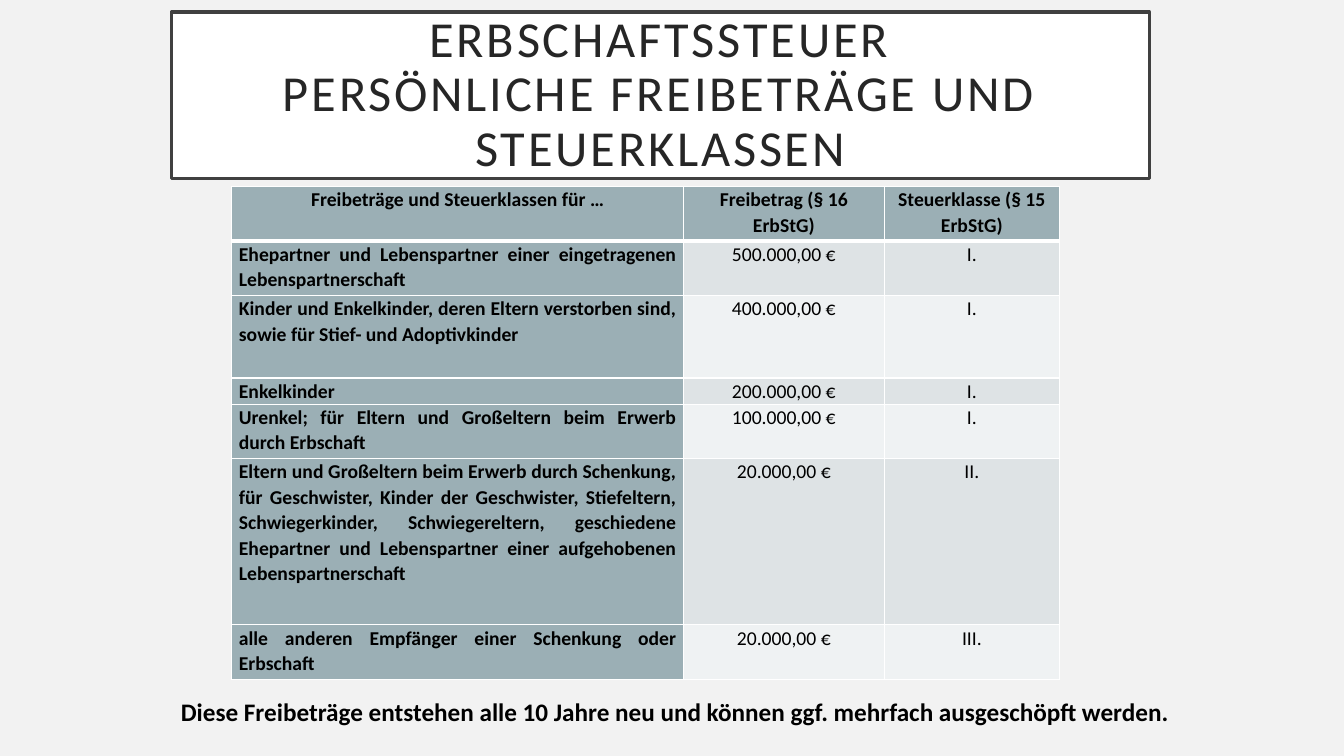
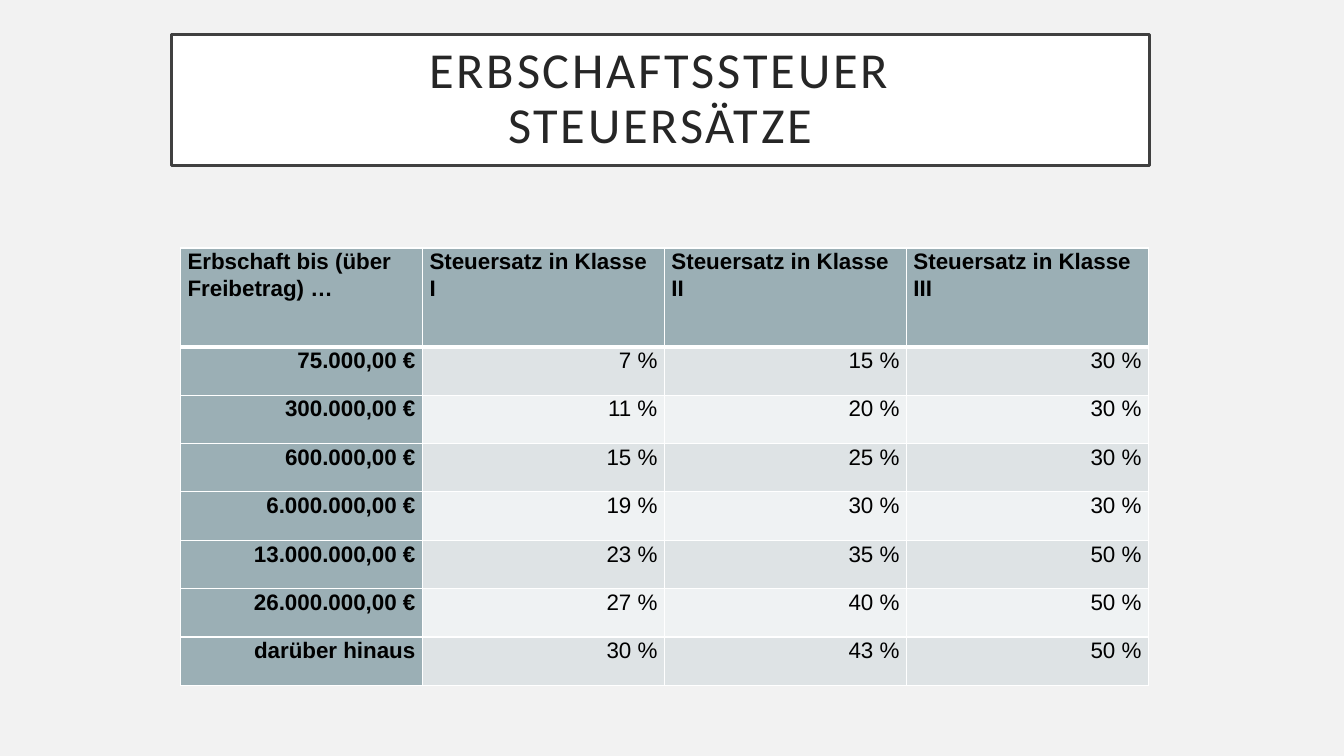
from dataclasses import dataclass

from lxml.etree import SubElement
from pptx import Presentation
from pptx.dml.color import RGBColor
from pptx.enum.text import MSO_ANCHOR, MSO_AUTO_SIZE, PP_ALIGN
from pptx.oxml.ns import qn
from pptx.util import Inches, Pt


@dataclass(frozen=True)
class Theme:
    # Colours
    back: str = "F2F2F2"
    white: str = "FFFFFF"
    frame: str = "404040"
    title: str = "262626"
    ink: str = "000000"
    head: str = "9BAFB5"
    bands: tuple = ("DEE3E5", "EFF2F3")
    # Fonts and sizes
    font: str = "Calibri"
    alt: str = "Arial"
    big: int = 36
    note: int = 18
    wide: int = 16
    small: int = 14


T = Theme()

ALLOWANCES = [
    ("Freibeträge und Steuerklassen für …", "Freibetrag (§ 16 ErbStG)",
     "Steuerklasse (§ 15 ErbStG)"),
    ("Ehepartner und Lebenspartner einer eingetragenen Lebenspartnerschaft",
     "500.000,00 €", "I."),
    ("Kinder und Enkelkinder, deren Eltern verstorben sind, "
     "sowie für Stief- und Adoptivkinder", "400.000,00 €", "I."),
    ("Enkelkinder", "200.000,00 €", "I."),
    ("Urenkel; für Eltern und Großeltern beim Erwerb durch Erbschaft",
     "100.000,00 €", "I."),
    ("Eltern und Großeltern beim Erwerb durch Schenkung, für Geschwister, "
     "Kinder der Geschwister, Stiefeltern, Schwiegerkinder, Schwiegereltern, "
     "geschiedene Ehepartner und Lebenspartner einer aufgehobenen "
     "Lebenspartnerschaft", "20.000,00 €", "II."),
    ("alle anderen Empfänger einer Schenkung oder Erbschaft",
     "20.000,00 €", "III."),
]

RATES = [
    ("Erbschaft bis (über Freibetrag) …", "Steuersatz in Klasse I",
     "Steuersatz in Klasse II", "Steuersatz in Klasse III"),
    ("75.000,00 €", "7 %", "15 %", "30 %"),
    ("300.000,00 €", "11 %", "20 %", "30 %"),
    ("600.000,00 €", "15 %", "25 %", "30 %"),
    ("6.000.000,00 €", "19 %", "30 %", "30 %"),
    ("13.000.000,00 €", "23 %", "35 %", "50 %"),
    ("26.000.000,00 €", "27 %", "40 %", "50 %"),
    ("darüber hinaus", "30 %", "43 %", "50 %"),
]


def rgb(code):
    return RGBColor.from_string(code)


def style(para, size, font=T.font, color=T.ink, bold=False, align=None):
    para.alignment = align
    for run in para.runs:
        run.font.size = Pt(size)
        run.font.name = font
        run.font.bold = bold
        run.font.color.rgb = rgb(color)


def add_title(slide, text, box):
    """Framed heading in the title placeholder."""
    shape = slide.shapes.title
    shape.left, shape.top, shape.width, shape.height = map(Inches, box)
    shape.fill.solid()
    shape.fill.fore_color.rgb = rgb(T.white)
    shape.line.color.rgb = rgb(T.frame)
    shape.line.width = Pt(2.5)
    frame = shape.text_frame
    frame.text = text
    frame.word_wrap = True
    frame.auto_size = MSO_AUTO_SIZE.NONE
    frame.vertical_anchor = MSO_ANCHOR.MIDDLE
    frame.margin_left = frame.margin_right = Inches(0.2)
    frame.margin_top = frame.margin_bottom = Inches(0.2)
    para = frame.paragraphs[0]
    para.line_spacing = 0.9
    style(para, T.big, color=T.title, align=PP_ALIGN.CENTER)
    for run in para.runs:
        run.font._element.set("spc", "200")


def add_rules(cell, row):
    """White cell borders, heavier between header and body."""
    props = cell._tc.get_or_add_tcPr()
    heavy = {0: "lnB", 1: "lnT"}.get(row)
    for side in ("lnL", "lnR", "lnT", "lnB"):
        width = Pt(3 if side == heavy else 1)
        line = SubElement(props, qn(f"a:{side}"), w=str(width))
        fill = SubElement(line, qn("a:solidFill"))
        SubElement(fill, qn("a:srgbClr"), val=T.white)


def add_grid(slide, data, spot, cols, rows, size, font, aligns):
    """Table; aligns holds header, first column and value alignment."""
    left, top = spot
    table = slide.shapes.add_table(
        len(rows), len(cols), Inches(left), Inches(top),
        Inches(sum(cols)), Inches(sum(rows))).table
    for col, width in zip(table.columns, cols):
        col.width = Inches(width)
    for line, height in zip(table.rows, rows):
        line.height = Inches(height)

    top_align, key_align, val_align = aligns
    for r, texts in enumerate(data):
        for c, text in enumerate(texts):
            cell = table.cell(r, c)
            key = r == 0 or c == 0
            add_rules(cell, r)
            cell.fill.solid()
            cell.fill.fore_color.rgb = rgb(
                T.head if key else T.bands[(r - 1) % 2])
            cell.margin_left = cell.margin_right = Inches(0.07)
            cell.margin_top = cell.margin_bottom = 0
            cell.text_frame.text = text
            para = cell.text_frame.paragraphs[0]
            para.line_spacing = 1.07
            para.space_after = Pt(8)
            align = top_align if r == 0 else key_align if c == 0 else val_align
            style(para, size, font, bold=key, align=align)


def add_note(slide, text, box):
    """Bold closing line below the table."""
    frame = slide.shapes.add_textbox(*map(Inches, box)).text_frame
    frame.word_wrap = True
    frame.text = text
    style(frame.paragraphs[0], T.note, bold=True, align=PP_ALIGN.CENTER)


def allowance_slide(deck):
    slide = deck.slides.add_slide(deck.slide_layouts[5])
    add_title(slide, "ERBSCHAFTSSTEUER\vPERSÖNLICHE FREIBETRÄGE UND "
              "STEUERKLASSEN", (1.7, 0.12, 9.7, 1.65))
    add_grid(slide, ALLOWANCES, (2.3, 1.85), (4.48, 1.99, 1.74),
             (0.54, 0.54, 0.82, 0.26, 0.54, 1.65, 0.54), T.small, T.font,
             (PP_ALIGN.CENTER, PP_ALIGN.JUSTIFY, PP_ALIGN.CENTER))
    add_note(slide, "Diese Freibeträge entstehen alle 10 Jahre neu und können "
             "ggf. mehrfach ausgeschöpft werden. ", (0.87, 6.86, 11.71, 0.4))


def rate_slide(deck):
    slide = deck.slides.add_slide(deck.slide_layouts[5])
    add_title(slide, "ERBSCHAFTSSTEUER\vSTEUERSÄTZE", (1.7, 0.34, 9.7, 1.3))
    add_grid(slide, RATES, (1.79, 2.46), [2.4] * 4, [0.98] + [0.48] * 7,
             T.wide, T.alt, (PP_ALIGN.LEFT, PP_ALIGN.RIGHT, PP_ALIGN.RIGHT))


def main():
    deck = Presentation()
    deck.slide_width, deck.slide_height = Inches(13.33), Inches(7.5)
    # Shared background
    fill = deck.slide_master.background.fill
    fill.solid()
    fill.fore_color.rgb = rgb(T.back)
    allowance_slide(deck)
    rate_slide(deck)
    deck.save("out.pptx")


if __name__ == "__main__":
    main()
